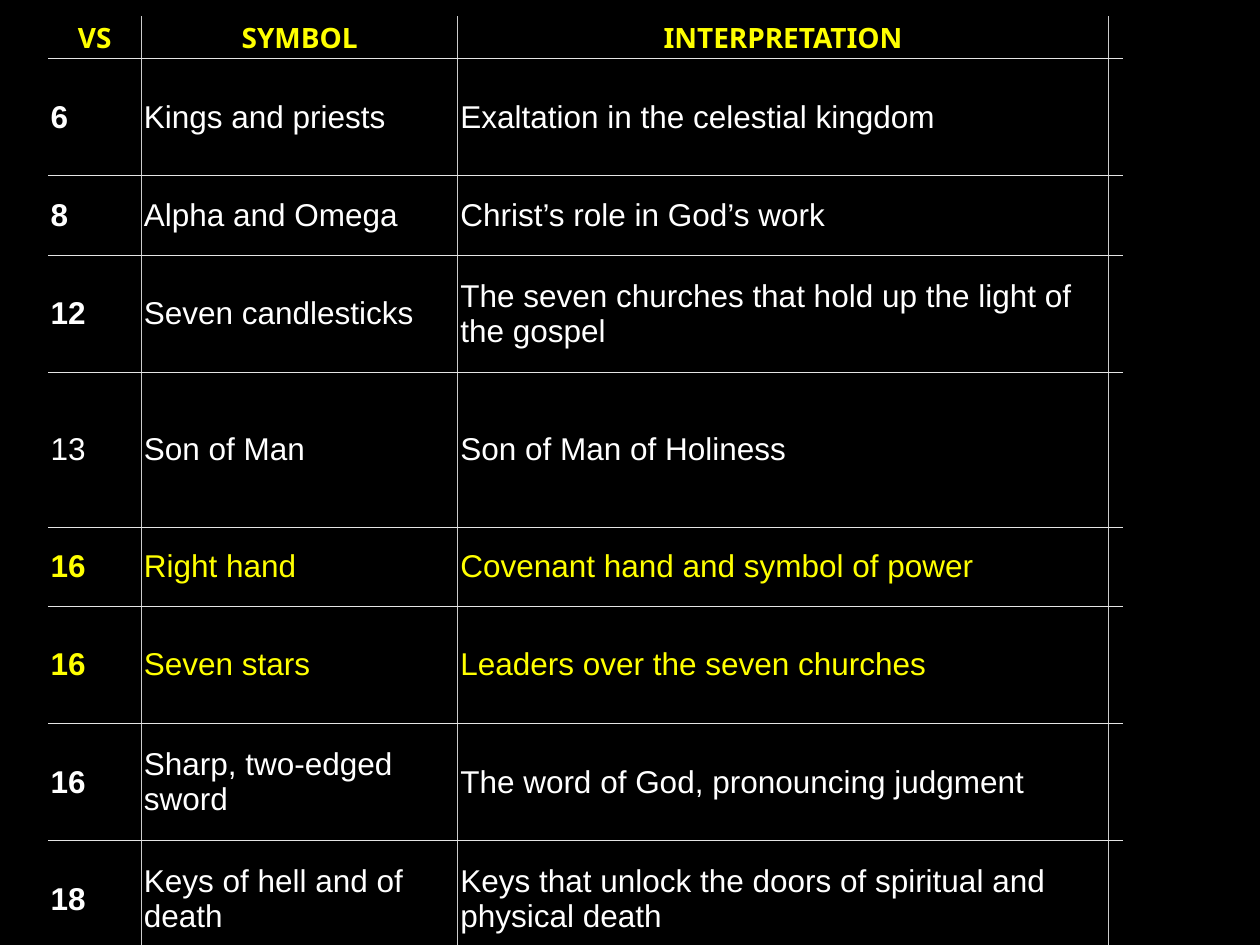
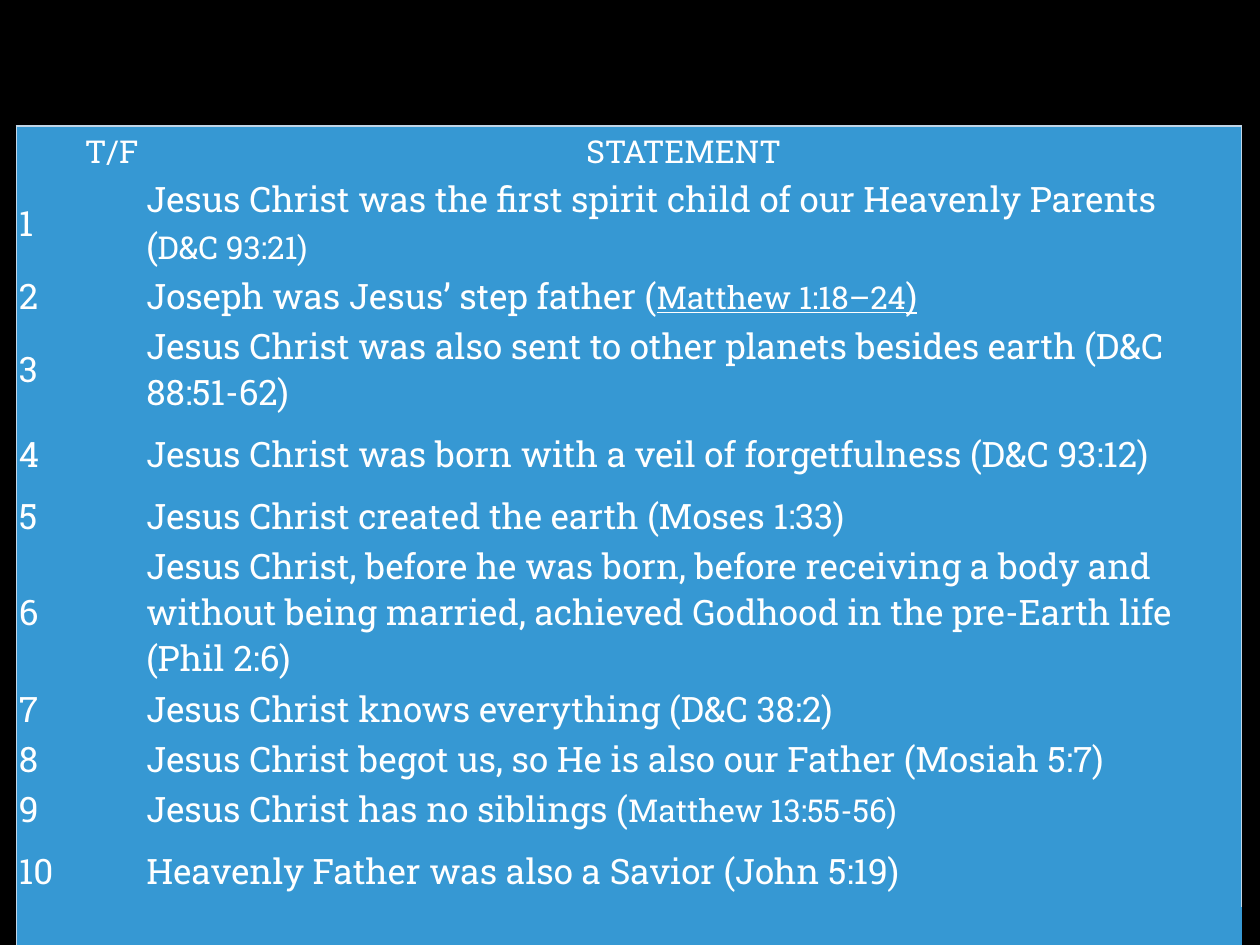
"""Build two scripture-study slides: a table of symbols and a true/false quiz."""
import pptx
import pptx.dml.color
import pptx.enum.text
import pptx.oxml
import pptx.oxml.ns
import pptx.util
from pptx.util import Cm

BLACK = pptx.dml.color.RGBColor(0x00, 0x00, 0x00)
WHITE = pptx.dml.color.RGBColor(0xFF, 0xFF, 0xFF)
YELLOW = pptx.dml.color.RGBColor(0xFF, 0xFF, 0x00)
BLUE = pptx.dml.color.RGBColor(0x36, 0x98, 0xD3)
COLUMN_RULE = pptx.dml.color.RGBColor(0xCC, 0xCC, 0xCC)
ROW_RULE = pptx.dml.color.RGBColor(0xE5, 0xE5, 0xE5)
FRAME = pptx.dml.color.RGBColor(0xC1, 0xD5, 0xE7)

PLAIN_STYLE = "{2D5ABB26-0587-4C30-8999-92F81FD0307C}"
CENTER = pptx.enum.text.PP_ALIGN.CENTER
BOTTOM = pptx.enum.text.MSO_ANCHOR.BOTTOM
MIDDLE = pptx.enum.text.MSO_ANCHOR.MIDDLE

SYMBOL_HEADINGS = ["VS", "SYMBOL", "INTERPRETATION"]
SYMBOLS = [
    ("6", "Kings and priests", "Exaltation in the celestial kingdom"),
    ("8", "Alpha and Omega", "Christ’s role in God’s work"),
    ("12", "Seven candlesticks", "The seven churches that hold up the light of the gospel"),
    ("13", "Son of Man", "Son of Man of Holiness"),
    ("16", "Right hand", "Covenant hand and symbol of power"),
    ("16", "Seven stars", "Leaders over the seven churches"),
    ("16", "Sharp, two-edged sword", "The word of God, pronouncing judgment"),
    ("18", "Keys of hell and of death", "Keys that unlock the doors of spiritual and physical death"),
]
HIGHLIGHTED_SYMBOLS = ("Right hand", "Seven stars")
SYMBOL_COLUMNS = [1.88, 6.38, 13.11, 0.3]
SYMBOL_ROWS = [0.76, 2.36, 1.6, 2.36, 3.12, 1.6, 2.36, 2.36, 2.36]

STATEMENTS = [
    [("Jesus Christ was the first spirit child of our Heavenly Parents (", {}),
     ("D&C 93:21)", {"size": 18})],
    [("Joseph was Jesus’ step father (", {}),
     ("Matthew 1:18–24", {"size": 18, "underline": True}),
     (")", {"underline": True})],
    [("Jesus Christ was also sent to other planets besides earth (D&C 88:51-62)", {})],
    [("Jesus Christ was born with a veil of forgetfulness (D&C 93:12)", {})],
    [("Jesus Christ created the earth (Moses 1:33)", {})],
    [("Jesus Christ, before he was born, before receiving a body and without being "
      "married, achieved Godhood in the pre-Earth life (Phil 2:6)", {})],
    [("Jesus Christ knows everything (D&C 38:2)", {})],
    [("Jesus Christ begot us, so He is also our Father (Mosiah 5:7)", {})],
    [("Jesus Christ has no siblings (", {}),
     ("Matthew 13:55-56)", {"size": 18})],
    [("Heavenly Father was also a Savior (John 5:19)", {})],
]
QUIZ_COLUMNS = [1.27, 1.3, 21.77, 0.36]
QUIZ_ROWS = [0.97, 1.47, 0.76, 1.47, 1.47, 0.76, 2.18, 0.76, 0.76, 0.76, 1.47, 1.17]


def add_black_slide(deck):
    """Add a blank slide with a black background."""
    slide = deck.slides.add_slide(deck.slide_layouts[6])
    slide.background.fill.solid()
    slide.background.fill.fore_color.rgb = BLACK
    return slide


def add_plain_table(slide, left, top, columns, rows, fill=None):
    """Add an unstyled table with tight margins and sizes in centimetres."""
    frame = slide.shapes.add_table(len(rows), len(columns), Cm(left), Cm(top),
                                   Cm(sum(columns)), Cm(sum(rows)))
    table = frame.table
    table.first_row = table.horz_banding = False
    style = table._tbl.tblPr.find(pptx.oxml.ns.qn("a:tableStyleId"))
    style.text = PLAIN_STYLE
    for column, width in zip(table.columns, columns):
        column.width = Cm(width)
    for row, height in zip(table.rows, rows):
        row.height = Cm(height)
    for cell in table.iter_cells():
        cell.margin_left = cell.margin_right = Cm(0.05)
        cell.margin_top = cell.margin_bottom = Cm(0.04)
        if fill is None:
            cell.fill.background()
        else:
            cell.fill.solid()
            cell.fill.fore_color.rgb = fill
    return table


def write_cell(cell, pieces, face, size, color=WHITE, bold=False, heading=False):
    """Write (text, overrides) pieces as the formatted runs of one cell."""
    cell.vertical_anchor = BOTTOM if heading else MIDDLE
    paragraph = cell.text_frame.paragraphs[0]
    if heading:
        paragraph.alignment = CENTER
    for text, overrides in pieces:
        run = paragraph.add_run()
        run.text = text
        run.font.name = face
        run.font.size = pptx.util.Pt(overrides.get("size", size))
        run.font.bold = bold
        run.font.underline = overrides.get("underline", False)
        run.font.color.rgb = color


def set_borders(cell, sides, width):
    """Draw cell sides, given as (side letter, colour) in the order L, R, T, B."""
    properties = cell._tc.get_or_add_tcPr()
    for position, (side, color) in enumerate(sides):
        properties.insert(position, pptx.oxml.parse_xml(
            f'<a:ln{side} {pptx.oxml.ns.nsdecls("a")} w="{pptx.util.Pt(width)}">'
            f'<a:solidFill><a:srgbClr val="{color}"/></a:solidFill></a:ln{side}>'))


def rule_grid(table):
    """Rule the table inside and below, leaving its other edges open."""
    last_column = len(table.columns) - 1
    for r, row in enumerate(table.rows):
        for c, cell in enumerate(row.cells):
            sides = [("L", COLUMN_RULE, c > 0), ("R", COLUMN_RULE, c < last_column),
                     ("T", ROW_RULE, r > 0), ("B", ROW_RULE, True)]
            set_borders(cell, [(side, color) for side, color, drawn in sides if drawn], 0.75)


def rule_frame(table):
    """Draw a line around the whole table."""
    last_row, last_column = len(table.rows) - 1, len(table.columns) - 1
    for r, row in enumerate(table.rows):
        for c, cell in enumerate(row.cells):
            sides = [("L", c == 0), ("R", c == last_column), ("T", r == 0), ("B", r == last_row)]
            set_borders(cell, [(side, FRAME) for side, drawn in sides if drawn], 1)


def build_symbols(deck):
    """Build the slide that interprets the symbols verse by verse."""
    table = add_plain_table(add_black_slide(deck), 0.97, 0.33, SYMBOL_COLUMNS, SYMBOL_ROWS)
    for c, heading in enumerate(SYMBOL_HEADINGS):
        write_cell(table.cell(0, c), [(heading, {})], "Noto Sans", 16, YELLOW, True, True)
    for r, entry in enumerate(SYMBOLS, start=1):
        verse, symbol, _ = entry
        color = YELLOW if symbol in HIGHLIGHTED_SYMBOLS else WHITE
        for c, text in enumerate(entry):
            write_cell(table.cell(r, c), [(text, {})], "Arial", 18, color,
                       bold=c == 0 and verse != "13")
    rule_grid(table)


def build_quiz(deck):
    """Build the slide of numbered true/false statements."""
    table = add_plain_table(add_black_slide(deck), 0.33, 2.54, QUIZ_COLUMNS, QUIZ_ROWS, BLUE)
    for c, heading in ((1, "T/F"), (2, "STATEMENT")):
        write_cell(table.cell(0, c), [(heading, {})], "Roboto Slab", 18, heading=True)
    for number, statement in enumerate(STATEMENTS, start=1):
        write_cell(table.cell(number, 0), [(str(number), {})], "Roboto Slab", 20)
        write_cell(table.cell(number, 2), statement, "Roboto Slab", 20)
    rule_frame(table)
    last_row = len(QUIZ_ROWS) - 1
    table.cell(last_row, 0).merge(table.cell(last_row, len(QUIZ_COLUMNS) - 1))


def main():
    """Build and save the presentation."""
    deck = pptx.Presentation()
    deck.slide_width, deck.slide_height = Cm(25.4), Cm(19.05)
    build_symbols(deck)
    build_quiz(deck)
    deck.save("out.pptx")


if __name__ == "__main__":
    main()
